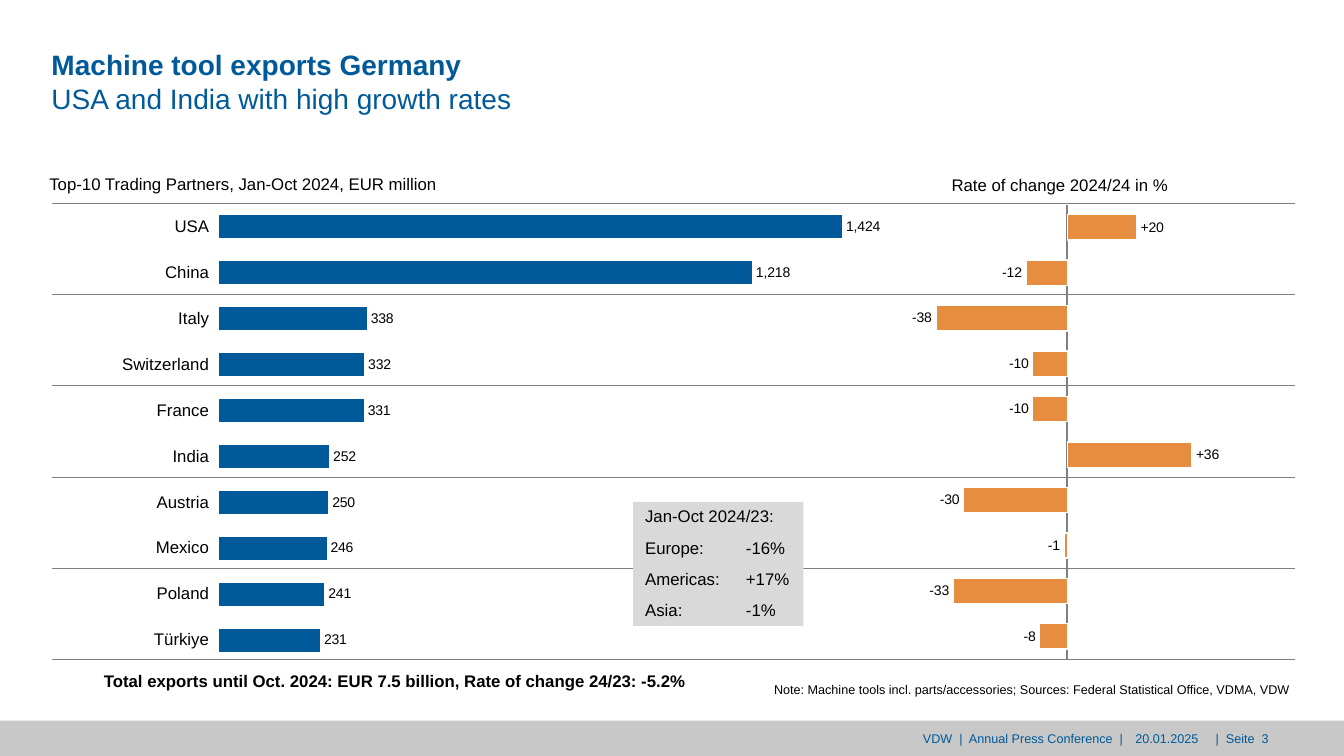
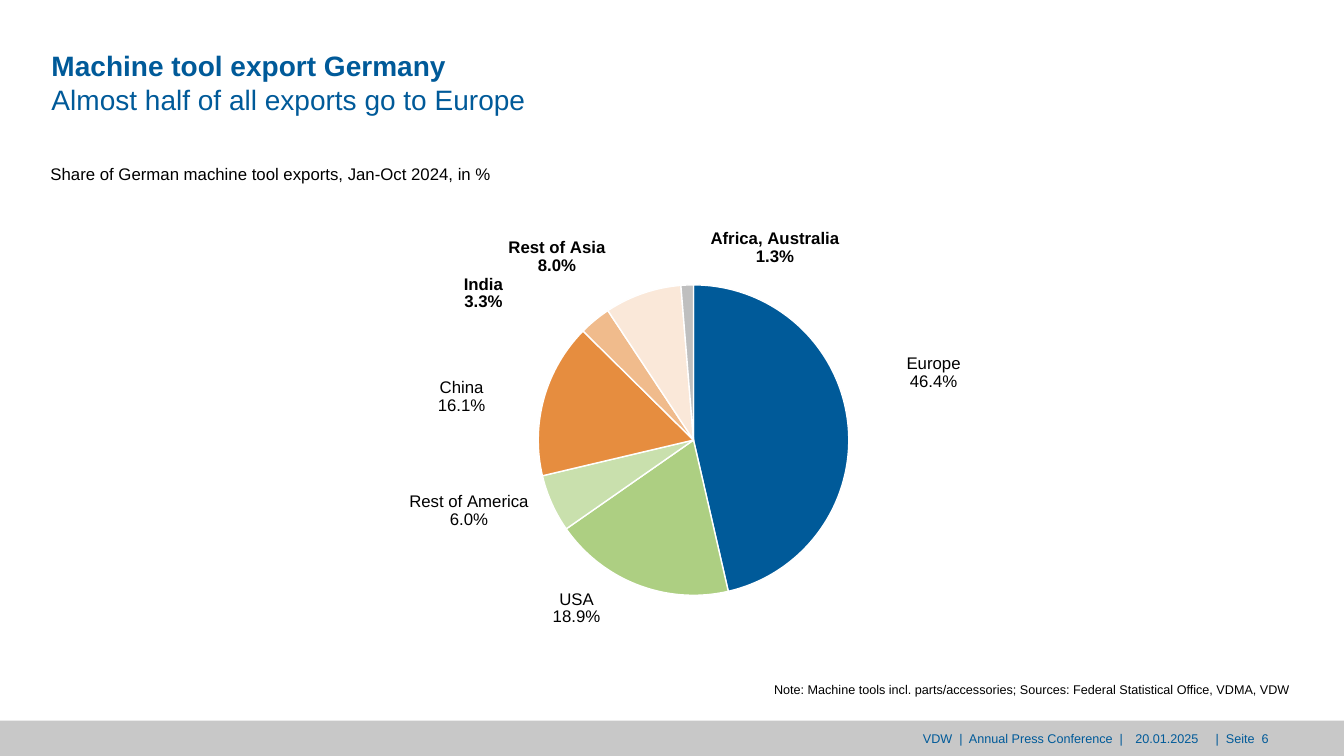
from lxml import etree
from pptx import Presentation
from pptx.chart.data import CategoryChartData
from pptx.dml.color import RGBColor
from pptx.enum.chart import XL_CHART_TYPE, XL_LABEL_POSITION, XL_TICK_LABEL_POSITION, XL_TICK_MARK
from pptx.enum.shapes import MSO_CONNECTOR, MSO_SHAPE
from pptx.enum.text import MSO_ANCHOR, MSO_AUTO_SIZE, PP_ALIGN
from pptx.oxml import parse_xml
from pptx.oxml.ns import nsdecls, qn
from pptx.util import Inches, Pt

LEFT, CENTER, RIGHT = PP_ALIGN.LEFT, PP_ALIGN.CENTER, PP_ALIGN.RIGHT
TOP, BOTTOM = MSO_ANCHOR.TOP, MSO_ANCHOR.BOTTOM
BAR, PIE = XL_CHART_TYPE.BAR_CLUSTERED, XL_CHART_TYPE.PIE
OUTSIDE_END = XL_LABEL_POSITION.OUTSIDE_END
NO_LABELS = XL_TICK_LABEL_POSITION.NONE
TICK_OUT, TICK_NONE = XL_TICK_MARK.OUTSIDE, XL_TICK_MARK.NONE
RECT, STRAIGHT = MSO_SHAPE.RECTANGLE, MSO_CONNECTOR.STRAIGHT
NO_FIT = MSO_AUTO_SIZE.NONE

FONT = "Arial"
BLUE = RGBColor(0x00, 0x5A, 0x99)
ORANGE = RGBColor(0xE6, 0x8D, 0x3F)
LIGHT_ORANGE = RGBColor(0xF0, 0xBB, 0x8C)
PALE_ORANGE = RGBColor(0xFA, 0xE8, 0xD9)
GREEN = RGBColor(0xAD, 0xCF, 0x82)
LIGHT_GREEN = RGBColor(0xC9, 0xE0, 0xAD)
SILVER = RGBColor(0xBF, 0xBF, 0xBF)
BAND_GREY = RGBColor(0xC8, 0xC8, 0xC8)
BOX_GREY = RGBColor(0xD9, 0xD9, 0xD9)
LINE_GREY = RGBColor(0x80, 0x80, 0x80)
BLACK = RGBColor(0, 0, 0)
WHITE = RGBColor(0xFF, 0xFF, 0xFF)

# The slide is a grid of 100 columns by 100 rows; boxes are (left, top, width, height).
SLIDE_W, SLIDE_H = Inches(13.33), Inches(7.5)
COL, ROW = SLIDE_W / 100, SLIDE_H / 100
TAB_STEP = Inches(0.5)

NOTE = "Note: Machine tools incl. parts/accessories; Sources: Federal Statistical Office, VDMA, VDW"

EXPORTS = {
    "USA": (1424, 20), "China": (1218, -12), "Italy": (338, -38),
    "Switzerland": (332, -10), "France": (331, -10), "India": (252, 36),
    "Austria": (250, -30), "Mexico": (246, -1), "Poland": (241, -33),
    "Türkiye": (231, -8),
}
# Region: share, colour, bold label, label shift as shares of the chart
SHARES = {
    "Europe": (46.4, BLUE, 0, 0.06, -0.07),
    "USA": (18.9, GREEN, 0, -0.04, 0),
    "Rest of America": (6, LIGHT_GREEN, 0, -0.02, -0.03),
    "China": (16.1, ORANGE, 0, -0.06, 0.04),
    "India": (3.3, LIGHT_ORANGE, 1, -0.1, -0.01),
    "Rest of Asia": (8, PALE_ORANGE, 1, -0.04, -0.03),
    "Africa, Australia": (1.3, SILVER, 1, 0.1, -0.03),
}


def emu(box):
    x, y, w, h = box
    return int(x * COL), int(y * ROW), int(w * COL), int(h * ROW)


def inside(box, dx, dy, w, h):
    """Box of size w by h, offset from the corner of another box."""
    return box[0] + dx, box[1] + dy, w, h


def write(tf, text, size=12, bold=False, color=BLACK, align=LEFT, anchor=TOP,
          after=0, inset=(0, 0)):
    """Fill a text frame, one paragraph for each line of text."""
    tf.word_wrap = True
    tf.auto_size = NO_FIT
    tf.vertical_anchor = anchor
    tf.margin_left, tf.margin_top = Inches(inset[0]), Inches(inset[1])
    tf.margin_right = tf.margin_bottom = 0
    for i, line in enumerate(text.split("\n")):
        p = tf.paragraphs[0] if i == 0 else tf.add_paragraph()
        pPr = p._p.get_or_add_pPr()
        for name, value in (("marL", 0), ("indent", 0), ("defTabSz", int(TAB_STEP))):
            pPr.set(name, str(value))
        etree.SubElement(pPr, qn("a:buNone"))
        p.alignment, p.line_spacing = align, 1.0
        p.space_before, p.space_after = 0, Pt(after)
        r = p.add_run()
        r.text = line
        set_font(r.font, size, color, bold)


def set_font(font, size, color=BLACK, bold=False):
    font.name, font.size, font.bold = FONT, Pt(size), bold
    font.color.rgb = color


def add_text(slide, box, text, **style):
    write(slide.shapes.add_textbox(*emu(box)).text_frame, text, **style)


def add_rule(slide, x, y, width):
    x1, y1, w, _ = emu((x, y, width, 0))
    line = slide.shapes.add_connector(STRAIGHT, x1, y1, x1 + w, y1)
    line.line.color.rgb, line.line.width = LINE_GREY, Pt(0.5)
    etree.SubElement(line._element.spPr, qn("a:effectLst"))


def add_title(slide, box, text):
    sp = slide.shapes.title
    sp.left, sp.top, sp.width, sp.height = emu(box)
    write(sp.text_frame, text, size=20, color=BLUE)
    sp.text_frame.paragraphs[0].runs[0].font.bold = True


def add_footer(slide, box, page):
    band = slide.shapes.add_shape(RECT, *emu(box))
    band.shadow.inherit = False
    band.fill.solid()
    band.fill.fore_color.rgb = BAND_GREY
    band.line.fill.background()
    for dx, width, text, align in (
            (50.18, 33.37, "VDW  |  Annual Press Conference  |", RIGHT),
            (84.15, 5.33, "20.01.2025", CENTER),
            (90.45, 5.63, f"|  Seite  {page}", LEFT)):
        add_text(slide, inside(box, dx, 1.33, width, 3.3), text, size=9, color=BLUE, align=align)


def new_slide(prs, layout, title, page, title_top):
    slide = prs.slides.add_slide(prs.slide_layouts[layout])
    add_title(slide, (3.83, title_top, 77.7, 9.87), title)
    add_footer(slide, (0, 95.33, 100, 4.67), page)
    add_text(slide, (19.58, 87.87, 76.35, 4.4), NOTE, size=9, align=RIGHT, anchor=BOTTOM)
    return slide


def add_chart(slide, box, kind, cats, vals, plot_box):
    """Chart of one series, whose plot area is given as shares of the chart."""
    data = CategoryChartData()
    data.categories = cats
    data.add_series("Series 1", vals)
    chart = slide.shapes.add_chart(kind, *emu(box), data).chart
    chart.has_title = chart.has_legend = False
    set_font(chart.font, 12)
    area = chart._chartSpace.chart.plotArea
    for old in area.findall(qn("c:layout")):
        area.remove(old)
    sizes = "".join(f'<c:{k} val="{v}"/>' for k, v in zip("xywh", plot_box))
    area.insert(0, parse_xml(
        f'<c:layout {nsdecls("c")}><c:manualLayout><c:layoutTarget val="inner"/>'
        f'<c:xMode val="edge"/><c:yMode val="edge"/>{sizes}</c:manualLayout></c:layout>'))
    return chart


def add_bars(slide, box, cats, vals, plot_box, color, gap, limits, number_format):
    chart = add_chart(slide, box, BAR, cats, vals, plot_box)
    plot = chart.plots[0]
    plot.gap_width, plot.vary_by_categories = gap, False
    plot.has_data_labels = True
    labels = plot.data_labels
    labels.show_value, labels.position = True, OUTSIDE_END
    labels.number_format, labels.number_format_is_linked = number_format, False
    set_font(labels.font, 10)
    series = plot.series[0]
    series.invert_if_negative = False
    series.format.fill.solid()
    series.format.fill.fore_color.rgb = color
    values, categories = chart.value_axis, chart.category_axis
    values.minimum_scale, values.maximum_scale = limits
    values.has_major_gridlines = values.visible = False
    categories.reverse_order = True
    categories.major_tick_mark = TICK_OUT
    return chart


def add_exports(slide, box):
    """Two bar charts side by side over rules that part the rows in pairs."""
    x, y, width, height = box
    amounts, rates = zip(*EXPORTS.values())
    chart = add_bars(slide, inside(box, -0.23, 0, 64.73, 60.8), list(EXPORTS), amounts,
                     (0.195, 0, 0.805, 1), BLUE, 100, (0, 1600), "#,##0")
    chart.category_axis.format.line.fill.background()

    chart = add_bars(slide, inside(box, 61.35, 0, 28.35, 60.4),
                     [str(n + 1) for n in range(len(rates))], rates,
                     (0, 0, 1, 1), ORANGE, 80, (-55, 55), r"\+0;\-0")
    axis = chart.category_axis
    axis.tick_label_position, axis.major_tick_mark = NO_LABELS, TICK_NONE
    outline = chart.plots[0].series[0].format.line
    for line, color, points in ((axis.format.line, LINE_GREY, 1.5), (outline, WHITE, 1)):
        line.color.rgb, line.width = color, Pt(points)

    pairs = len(EXPORTS) // 2
    for n in range(pairs + 1):
        add_rule(slide, x, y + n * height / pairs, width)
    add_text(slide, inside(box, -0.23, -4, 34.3, 2.7),
             "Top-10 Trading Partners, Jan-Oct 2024, EUR million")
    add_text(slide, inside(box, 66.9, -3.87, 18.7, 2.7), "Rate of change 2024/24 in %")
    add_text(slide, inside(box, 3.83, 61.73, 45, 3),
             "Total exports until Oct. 2024: EUR 7.5 billion, Rate of change 24/23: -5.2%",
             bold=True)


def add_region_box(slide, box):
    """Grey box whose values line up at the second tab step."""
    sp = slide.placeholders[1]
    sp.left, sp.top, sp.width, sp.height = emu(box)
    sp.fill.solid()
    sp.fill.fore_color.rgb = BOX_GREY
    write(sp.text_frame, "Jan-Oct 2024/23:\nEurope:\t-16%\nAmericas:\t+17%\nAsia:\t\t-1%",
          after=8, inset=(0.12, 0.04))
    slide.shapes._spTree.append(sp._element)  # in front of the rules


def pie_label(index, bold, dx, dy):
    return (f'<c:dLbl><c:idx val="{index}"/><c:layout><c:manualLayout><c:x val="{dx}"/>'
            f'<c:y val="{dy}"/></c:manualLayout></c:layout>{label_format(bold)}</c:dLbl>')


def label_format(bold):
    """Number format, font and content of category and percent labels."""
    shown = {"LegendKey": 0, "Val": 0, "CatName": 1, "SerName": 0, "Percent": 1, "BubbleSize": 0}
    flags = "".join(f'<c:show{name} val="{on}"/>' for name, on in shown.items())
    return ('<c:numFmt formatCode="0.0%" sourceLinked="0"/><c:spPr><a:noFill/></c:spPr>'
            f'<c:txPr><a:bodyPr/><a:p><a:pPr><a:defRPr sz="1200" b="{bold}">'
            f'<a:solidFill><a:srgbClr val="{BLACK}"/></a:solidFill><a:latin typeface="{FONT}"/>'
            '</a:defRPr></a:pPr><a:endParaRPr lang="en-US"/></a:p></c:txPr>'
            f'<c:dLblPos val="outEnd"/>{flags}<c:separator>\n</c:separator>')


def add_shares(slide, box):
    """Pie of export shares with its heading."""
    add_text(slide, inside(box, -15.08, -7.87, 40, 3),
             "Share of German machine tool exports, Jan-Oct 2024, in %")
    rows = list(SHARES.values())
    chart = add_chart(slide, box, PIE, list(SHARES), [row[0] for row in rows],
                      (0.32, 0.14, 0.36, 0.7))
    series = chart.plots[0].series[0]
    for i, row in enumerate(rows):
        part = series.points[i].format
        part.fill.solid()
        part.fill.fore_color.rgb = row[1]
        part.line.color.rgb, part.line.width = WHITE, Pt(1)
    labels = "".join(pie_label(i, *row[2:]) for i, row in enumerate(rows))
    series._element.find(qn("c:cat")).addprevious(parse_xml(
        f'<c:dLbls {nsdecls("c", "a")}>{labels}{label_format(1)}'
        '<c:showLeaderLines val="0"/></c:dLbls>'))


def main():
    prs = Presentation()
    prs.slide_width, prs.slide_height = SLIDE_W, SLIDE_H

    slide = new_slide(prs, 1, "Machine tool exports Germany\nUSA and India with high growth rates",
                      3, 6.27)
    add_exports(slide, (3.9, 26.93, 92.48, 60.27))
    add_region_box(slide, (47.1, 66.4, 12.67, 16.4))

    slide = new_slide(prs, 5, "Machine tool export Germany\nAlmost half of all exports go to Europe",
                      6, 6.4)
    add_shares(slide, (18.83, 29.47, 65.55, 58.67))
    prs.save("out.pptx")


if __name__ == "__main__":
    main()
